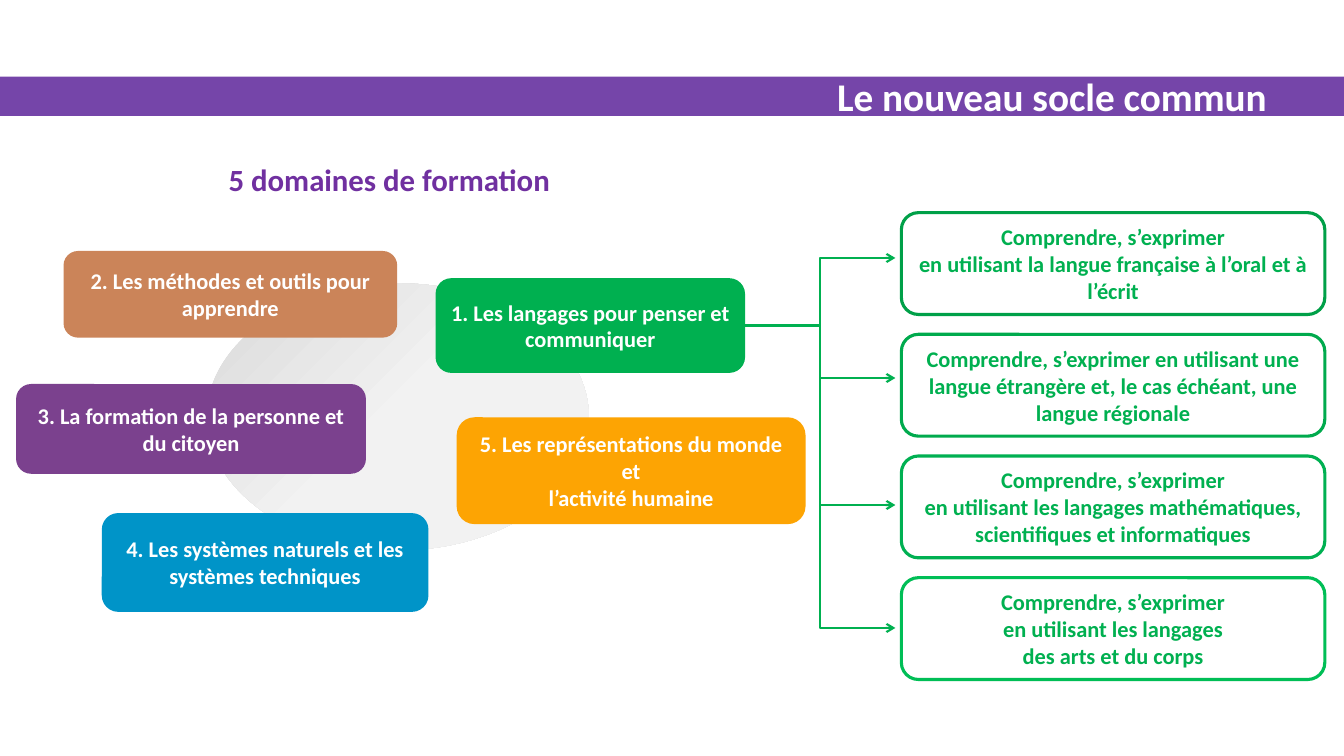
import pptx
import pptx.dml.color
import pptx.enum.shapes
import pptx.enum.text
import pptx.oxml
import pptx.oxml.ns
import pptx.util
import lxml.etree

Inches = pptx.util.Inches
Pt = pptx.util.Pt
SHAPE = pptx.enum.shapes.MSO_SHAPE
ALIGN = pptx.enum.text.PP_ALIGN
MIDDLE = pptx.enum.text.MSO_ANCHOR.MIDDLE
GREEN = "00B050"


def set_color(target, color):
    if hasattr(target, "solid"):
        target.solid()
        target = target.fore_color
    target.rgb = pptx.dml.color.RGBColor.from_string(color)


def write(shape, text, size, color, alignment):
    shape.text_frame.word_wrap = True
    paragraph = shape.text_frame.paragraphs[0]
    paragraph.text = text
    paragraph.alignment = alignment
    for run in paragraph.runs:
        run.font.name = "Calibri"
        run.font.size = Pt(size)
        run.font.bold = True
        set_color(run.font.color, color)


presentation = pptx.Presentation()
presentation.slide_width = Inches(13.33)
presentation.slide_height = Inches(7.5)
slide = presentation.slides.add_slide(presentation.slide_layouts[6])
shapes = slide.shapes

band = shapes.add_shape(SHAPE.RECTANGLE, 0, Inches(0.76), Inches(13.33), Inches(0.39))
band.shadow.inherit = False
set_color(band.fill, "7545A9")
band.line.fill.background()

ellipse = shapes.add_shape(SHAPE.OVAL, Inches(2.05), Inches(2.81), Inches(3.79), Inches(2.65))
ellipse.shadow.inherit = False
ellipse.line.fill.background()
stops = "".join(
    f'<a:gs pos="{position}"><a:srgbClr val="{color}"/></a:gs>'
    for position, color in [(0, "F2F2F2"), (50000, "F2F2F2"), (100000, "D9D9D9")]
)
gradient = pptx.oxml.parse_xml(
    f'<a:gradFill {pptx.oxml.ns.nsdecls("a")}><a:gsLst>{stops}</a:gsLst>'
    '<a:path path="circle"><a:fillToRect l="100000" t="100000"/></a:path></a:gradFill>'
)
ellipse._element.spPr.insert(2, gradient)

title = shapes.add_textbox(Inches(0.68), Inches(0.28), Inches(11.98), Inches(1.34))
title.text_frame.vertical_anchor = MIDDLE
write(title, "Le nouveau socle commun", 28, "FFFFFF", ALIGN.RIGHT)

domains = [
    ("4. Les systèmes naturels et les systèmes techniques", 1.01, 5.09, 3.24, 0.98, "0094C8"),
    ("3. La formation de la personne et du citoyen", 0.16, 3.81, 3.47, 0.89, "7B418E"),
    ("2. Les méthodes et outils pour apprendre", 0.63, 2.49, 3.31, 0.86, "CB8459"),
    ("5. Les représentations du monde et\nl’activité humaine", 4.53, 4.14, 3.46, 1.06, "FDA403"),
    ("1. Les langages pour penser et communiquer", 4.32, 2.76, 3.07, 0.94, GREEN),
]
for text, left, top, width, height, color in domains:
    domain = shapes.add_shape(
        SHAPE.ROUNDED_RECTANGLE, Inches(left), Inches(top), Inches(width), Inches(height)
    )
    domain.shadow.inherit = False
    set_color(domain.fill, color)
    domain.line.fill.background()
    domain.text_frame.vertical_anchor = MIDDLE
    write(domain, text, 16, "FFFFFF", ALIGN.CENTER)

heading = shapes.add_textbox(Inches(2.17), Inches(1.55), Inches(5.75), Inches(0.47))
write(heading, "5 domaines de formation", 22, "7030A0", ALIGN.LEFT)

languages = [
    ("Comprendre, s’exprimer\nen utilisant la langue française à l’oral et à l’écrit", "00A048", 2.56),
    ("Comprendre, s’exprimer en utilisant une langue étrangère et, le cas échéant, une langue régionale",
     "00AA4D", 3.75),
    ("Comprendre, s’exprimer\nen utilisant les langages mathématiques, scientifiques et informatiques",
     "00B052", 5.01),
    ("Comprendre, s’exprimer\nen utilisant les langages\ndes arts et du corps", "00BE56", 6.23),
]
for index, (text, outline, arrow_end) in enumerate(languages):
    language = shapes.add_shape(
        SHAPE.ROUNDED_RECTANGLE,
        Inches(8.94), Inches(2.11 + 1.207 * index), Inches(4.2), Inches(1.01),
    )
    language.shadow.inherit = False
    language.fill.background()
    set_color(language.line.fill, outline)
    language.line.width = Pt(2.25)
    language.text_frame.vertical_anchor = MIDDLE
    write(language, text, 16, GREEN, ALIGN.CENTER)

    arrow = shapes.add_connector(
        pptx.enum.shapes.MSO_CONNECTOR.ELBOW,
        Inches(7.39), Inches(3.23), Inches(8.88), Inches(arrow_end),
    )
    set_color(arrow.line.fill, GREEN)
    arrow.line.width = Pt(1.5)
    tail = lxml.etree.SubElement(arrow.line._get_or_add_ln(), pptx.oxml.ns.qn("a:tailEnd"))
    tail.set("type", "arrow")
    lxml.etree.SubElement(arrow._element.spPr, pptx.oxml.ns.qn("a:effectLst"))

presentation.save("out.pptx")
